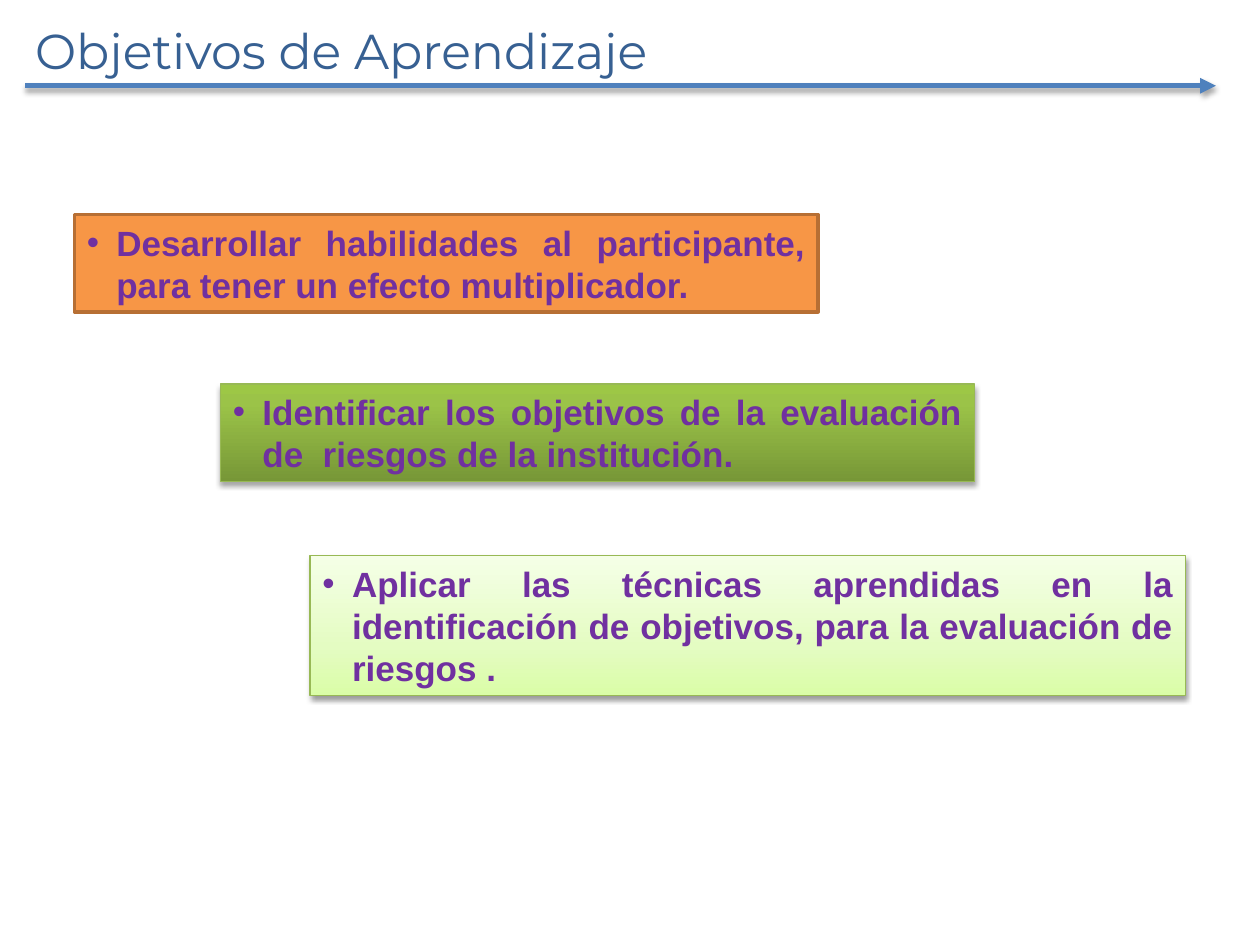
import pptx
import pptx.dml.color
import pptx.enum.shapes
import pptx.enum.text
import pptx.oxml
import pptx.oxml.ns
import pptx.util
from lxml import etree

Pt = pptx.util.Pt
RGBColor = pptx.dml.color.RGBColor
qn = pptx.oxml.ns.qn

TITLE_BLUE = RGBColor(0x37, 0x60, 0x92)
ARROW_BLUE = RGBColor(0x4F, 0x81, 0xBD)
PURPLE = RGBColor(0x70, 0x30, 0xA0)
ORANGE = RGBColor(0xF7, 0x96, 0x46)
BROWN = RGBColor(0xB7, 0x6F, 0x34)
GREEN_EDGE = RGBColor(0x98, 0xB9, 0x55)
BLACK = RGBColor(0, 0, 0)
GREEN_STOPS = ((0, RGBColor(0x77, 0x97, 0x37)),
               (80, RGBColor(0x9B, 0xC3, 0x48)),
               (100, RGBColor(0x9D, 0xC7, 0x46)))
PALE_STOPS = ((0, RGBColor(0xDA, 0xFD, 0xA7)),
              (35, RGBColor(0xE4, 0xFC, 0xC2)),
              (100, RGBColor(0xF5, 0xFF, 0xE7)))


def write_text(frame, text, *, font, size, color, bold=False, align=None,
               bullet_indent=None):
    frame.word_wrap = True
    frame.auto_size = pptx.enum.text.MSO_AUTO_SIZE.SHAPE_TO_FIT_TEXT
    paragraph = frame.paragraphs[0]
    if align is not None:
        paragraph.alignment = align
    if bullet_indent:
        properties = paragraph._p.get_or_add_pPr()
        properties.set("marL", str(Pt(bullet_indent)))
        properties.set("indent", str(-Pt(bullet_indent)))
        etree.SubElement(properties, qn("a:buFont"), typeface="Arial")
        etree.SubElement(properties, qn("a:buChar"), char="•")
    run = paragraph.add_run()
    run.text = text
    run.font.name = font
    run.font.size = Pt(size)
    run.font.bold = bold
    run.font.color.rgb = color


def add_color(parent, color, opacity=None):
    node = etree.SubElement(parent, qn("a:srgbClr"), val=str(color))
    if opacity is not None:
        etree.SubElement(node, qn("a:alpha"), val=str(opacity * 1000))


class ObjectivesSlide:
    title_font = "Montserrat"
    body_font = "Arial"

    def __init__(self, presentation):
        self.slide = presentation.slides.add_slide(presentation.slide_layouts[6])

    def title(self, text, left, top, width, height):
        box = self.slide.shapes.add_textbox(Pt(left), Pt(top), Pt(width), Pt(height))
        write_text(box.text_frame, text, font=self.title_font, size=28,
                   color=TITLE_BLUE)

    def effects(self, element, opacity=None, distance=1.8):
        """Replace the theme shadow by none, or by a soft one below."""
        effect_list = etree.SubElement(element.spPr, qn("a:effectLst"))
        if opacity is not None:
            shadow = etree.SubElement(
                effect_list, qn("a:outerShdw"), blurRad=str(Pt(3.1)),
                dist=str(Pt(distance)), dir="5400000", rotWithShape="0")
            add_color(shadow, BLACK, opacity)

    def gradient(self, shape, stops):
        """Fill upwards from the first stop to the last."""
        shape.fill.gradient()
        fill = shape._element.spPr.find(qn("a:gradFill"))
        stop_list = fill.find(qn("a:gsLst"))
        for old_stop in list(stop_list):
            stop_list.remove(old_stop)
        for position, color in stops:
            stop = etree.SubElement(stop_list, qn("a:gs"), pos=str(position * 1000))
            add_color(stop, color)
        fill.find(qn("a:lin")).set("ang", "16200000")

    def arrow(self, x1, x2, y):
        arrow = self.slide.shapes.add_connector(
            pptx.enum.shapes.MSO_CONNECTOR.STRAIGHT, Pt(x1), Pt(y), Pt(x2), Pt(y))
        arrow.line.color.rgb = ARROW_BLUE
        arrow.line.width = Pt(3)
        line = arrow._element.spPr.find(qn("a:ln"))
        etree.SubElement(line, qn("a:tailEnd"), type="triangle")
        self.effects(arrow._element, opacity=35)

    def objective(self, text, left, top, width, height, *, fill, edge,
                  edge_width=0.75, **shadow):
        box = self.slide.shapes.add_shape(
            pptx.enum.shapes.MSO_SHAPE.RECTANGLE,
            Pt(left), Pt(top), Pt(width), Pt(height))
        if isinstance(fill, RGBColor):
            box.fill.solid()
            box.fill.fore_color.rgb = fill
        else:
            self.gradient(box, fill)
        box.line.color.rgb = edge
        box.line.width = Pt(edge_width)
        self.effects(box._element, **shadow)
        write_text(box.text_frame, text, font=self.body_font, size=20,
                   color=PURPLE, bold=True, bullet_indent=16.9,
                   align=pptx.enum.text.PP_ALIGN.JUSTIFY)


def main():
    presentation = pptx.Presentation()
    presentation.slide_width = Pt(720)
    presentation.slide_height = Pt(540)
    page = ObjectivesSlide(presentation)

    # Heading
    page.arrow(14.4, 694.8, 49)
    page.title("Objetivos de Aprendizaje", 13, 8, 574, 41)

    # Objectives, stepping down to the right
    page.objective(
        "Desarrollar habilidades al participante, para tener un efecto multiplicador.",
        42.5, 122.5, 425, 55.7, fill=ORANGE, edge=BROWN, edge_width=2)
    page.objective(
        "Identificar los objetivos de la evaluación de  riesgos de la institución.",
        126, 219.5, 431, 55.7, fill=GREEN_STOPS, edge=GREEN_EDGE, opacity=35)
    page.objective(
        "Aplicar las técnicas aprendidas en la identificación de objetivos, "
        "para la evaluación de riesgos .",
        177.2, 317.5, 500.4, 79.9, fill=PALE_STOPS, edge=GREEN_EDGE,
        opacity=38, distance=1.6)

    presentation.save("out.pptx")


if __name__ == "__main__":
    main()
